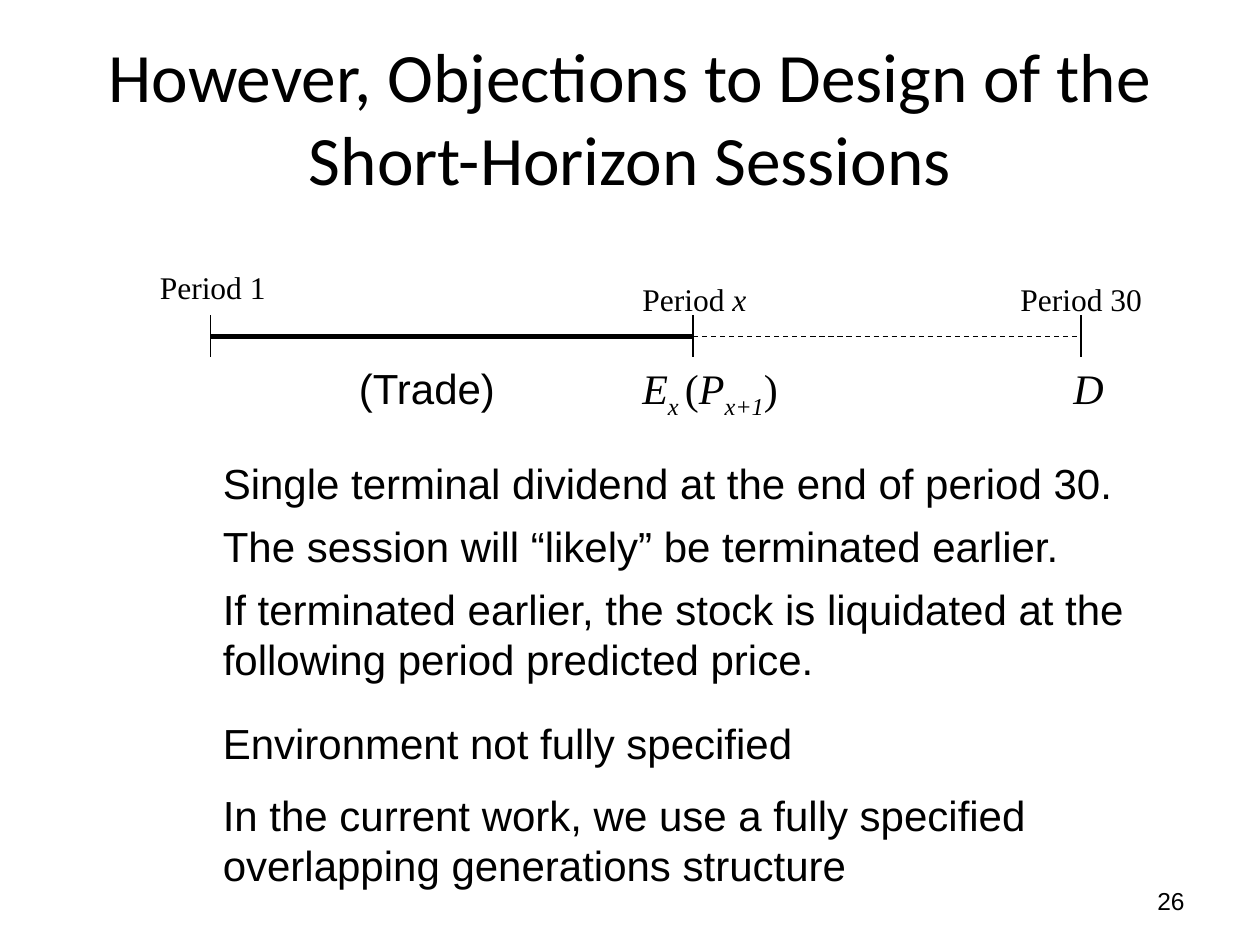
from lxml.etree import SubElement
from pptx import Presentation
from pptx.dml.color import RGBColor
from pptx.enum.dml import MSO_LINE
from pptx.enum.shapes import MSO_CONNECTOR
from pptx.enum.text import MSO_ANCHOR, PP_ALIGN
from pptx.oxml.ns import qn
from pptx.util import Inches, Pt

BLACK = RGBColor(0x00, 0x00, 0x00)
SERIF, SANS = "Times New Roman", "Arial"

presentation = Presentation()
presentation.slide_width = Inches(10)
presentation.slide_height = Inches(7.5)
slide = presentation.slides.add_slide(presentation.slide_layouts[5])


def add_text(left, top, width, height, runs, size, font, wrap=True):
    """Add a one-paragraph text box; each run is (text, italic, baseline)."""
    box = slide.shapes.add_textbox(*map(Inches, (left, top, width, height)))
    box.text_frame.word_wrap = wrap
    for text, italic, baseline in runs:
        run = box.text_frame.paragraphs[0].add_run()
        run.text = text
        run.font.size, run.font.name, run.font.italic = Pt(size), font, italic
        run.font.color.rgb = BLACK
        if baseline:
            run.font._element.set("baseline", str(baseline * 1000))
    return box


def add_line(start_x, start_y, end_x, end_y, weight):
    line = slide.shapes.add_connector(
        MSO_CONNECTOR.STRAIGHT, *map(Inches, (start_x, start_y, end_x, end_y)))
    line.line.color.rgb = BLACK
    line.line.width = Pt(weight)
    SubElement(line._element.spPr, qn("a:effectLst"))
    return line


# Title
title = slide.shapes.title
title.left, title.top, title.width, title.height = map(Inches, (0.5, 0.3, 9, 1.25))
title.text_frame.text = "However, Objections to Design of the Short-Horizon Sessions"
title.text_frame.vertical_anchor = MSO_ANCHOR.MIDDLE
title_paragraph = title.text_frame.paragraphs[0]
title_paragraph.alignment = PP_ALIGN.CENTER
title_font = title_paragraph.runs[0].font
title_font.size, title_font.name = Pt(39.6), "Calibri"
title_font.color.rgb = BLACK

# Timeline: traded part solid, remaining part dashed, a tick at each period
first_x, current_x, last_x = 1.67, 5.5, 8.58
axis_y, tick_top, tick_bottom = 2.67, 2.5, 2.83
add_line(first_x, axis_y, current_x, axis_y, 3)
remaining = add_line(current_x, axis_y, last_x, axis_y, 0.75)
remaining.line.dash_style = MSO_LINE.DASH
for tick_x in (first_x, current_x, last_x):
    add_line(tick_x, tick_top, tick_x, tick_bottom, 0.75)

# Period labels above the timeline
for left, top, width, runs in (
    (1.17, 2.08, 1.08, [("Period 1", False, 0)]),
    (5, 2.17, 1.17, [("Period ", False, 0), ("x", True, 0)]),
    (8, 2.17, 1.17, [("Period 30", False, 0)]),
):
    add_text(left, top, width, 0.4, runs, 18, SERIF)

# Values below the timeline
add_text(2.75, tick_bottom, 1.3, 0.5, [("(Trade)", False, 0)], 24, SANS, wrap=False)
expected_price = [("E", True, 0), ("x ", True, -25), ("(", False, 0),
                  ("P", True, 0), ("x+1", True, -25), (")", False, 0)]
add_text(5, tick_bottom, 1.34, 0.5, expected_price, 24, SERIF)
add_text(8.42, tick_bottom, 0.44, 0.5, [("D", True, 0)], 24, SERIF)

# Objections: (text, space before, space after) in points
objections = [
    ("Single terminal dividend at the end of period 30.", 0, 0),
    ("The session will “likely” be terminated earlier.", 7.2, 0),
    ("If terminated earlier, the stock is liquidated at the following period "
     "predicted price.", 7.2, 7.2),
    ("Environment not fully specified", 12, 0),
    ("In the current work, we use a fully specified overlapping generations "
     "structure", 12, 0),
]
body = slide.shapes.add_textbox(*map(Inches, (first_x, 3.58, 7.5, 3.7))).text_frame
body.word_wrap = True
body.text = "\n".join(text for text, _, _ in objections)
for paragraph, (_, before, after) in zip(body.paragraphs, objections):
    paragraph.space_before, paragraph.space_after = Pt(before), Pt(after)
    paragraph.line_spacing = Pt(28.8)
    font = paragraph.runs[0].font
    font.size, font.name = Pt(24), SANS
    font.color.rgb = BLACK

# Slide number
number = add_text(7.17, 6.95, 2.33, 0.4, [("26", False, 0)], 14, SANS)
number.text_frame.vertical_anchor = MSO_ANCHOR.MIDDLE
number.text_frame.paragraphs[0].alignment = PP_ALIGN.RIGHT

presentation.save("out.pptx")
